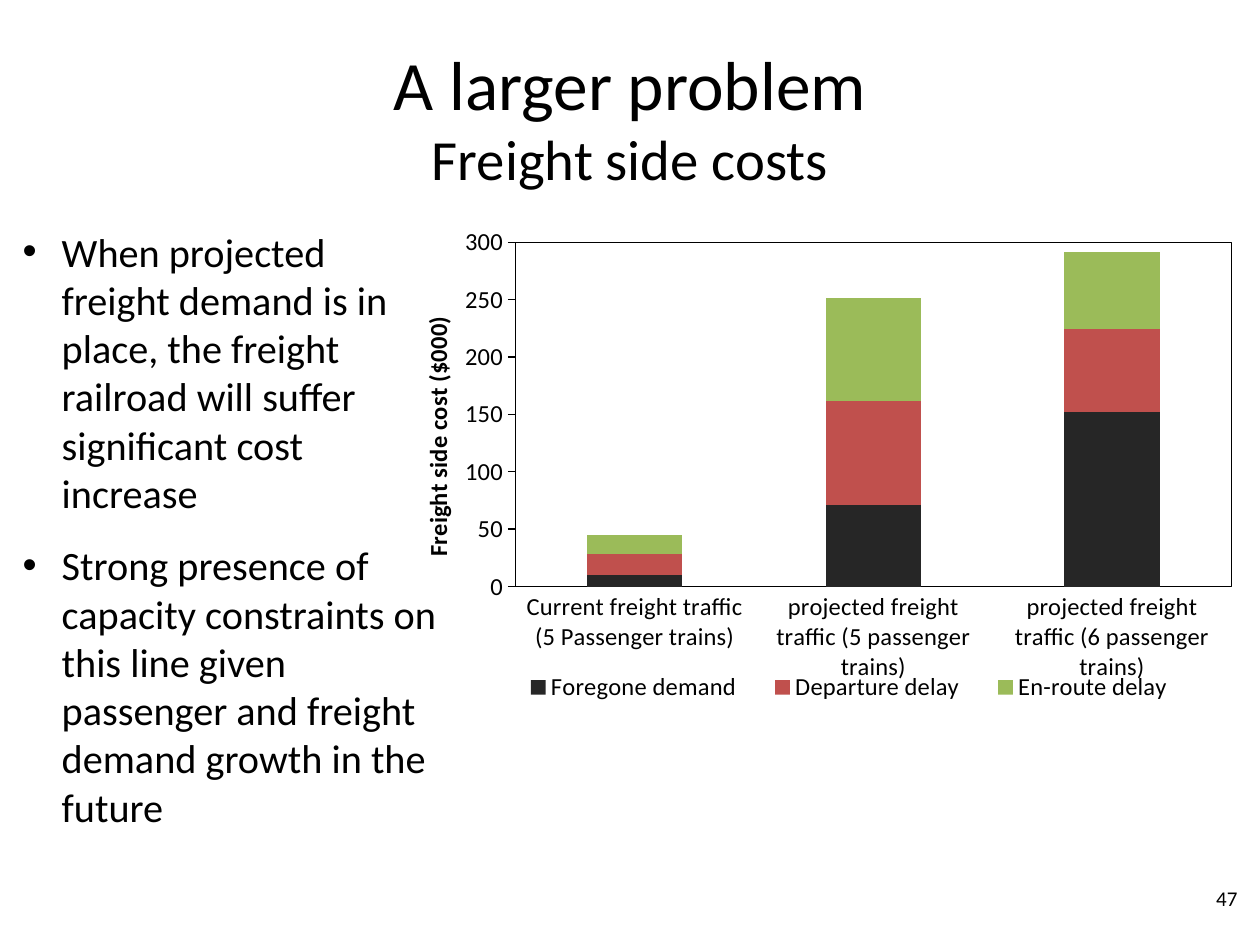
"""Build the slide on freight side costs with its stacked column chart."""
import lxml.etree
import pptx
import pptx.chart.data
import pptx.dml.color
import pptx.enum.chart
import pptx.enum.text
import pptx.oxml
import pptx.oxml.ns
import pptx.util

Inches = pptx.util.Inches
Pt = pptx.util.Pt
qn = pptx.oxml.ns.qn
FONT = "Calibri"
BLACK = pptx.dml.color.RGBColor(0x00, 0x00, 0x00)
CHARCOAL = pptx.dml.color.RGBColor(0x26, 0x26, 0x26)
RED = pptx.dml.color.RGBColor(0xC0, 0x50, 0x4D)
GREEN = pptx.dml.color.RGBColor(0x9B, 0xBB, 0x59)


def style_font(font, size, bold=False):
    font.name = FONT
    font.size = Pt(size)
    font.bold = bold
    font.color.rgb = BLACK


def set_layout(parent, position, inner=False, **fractions):
    for old in parent.findall(qn("c:layout")):
        parent.remove(old)
    layout = lxml.etree.Element(qn("c:layout"))
    manual = lxml.etree.SubElement(layout, qn("c:manualLayout"))
    settings = {"xMode": "edge", "yMode": "edge", **fractions}
    if inner:
        settings = {"layoutTarget": "inner", **settings}
    for tag, value in settings.items():
        lxml.etree.SubElement(manual, qn("c:" + tag)).set("val", str(value))
    parent.insert(position, layout)


deck = pptx.Presentation()
deck.slide_width = Inches(10)
deck.slide_height = Inches(7.5)
slide = deck.slides.add_slide(deck.slide_layouts[3])

title = slide.shapes.title
title.left, title.top, title.width, title.height = (
    Inches(0.5), Inches(0.3), Inches(9), Inches(1.25))
title.text_frame.auto_size = pptx.enum.text.MSO_AUTO_SIZE.NONE
heading = title.text_frame.paragraphs[0]
main_title = heading.add_run()
main_title.text = "A larger problem"
style_font(main_title.font, 39.6)
heading.add_line_break()
subtitle = heading.add_run()
subtitle.text = "Freight side costs"
style_font(subtitle.font, 32.4)

POINTS = [
    (1, 1.75, 3.17, "When projected freight demand is in place, the freight "
     "railroad will suffer significant cost increase"),
    (2, 4.24, 3.67, "Strong presence of capacity constraints on this line given "
     "passenger and freight demand growth in the future"),
]
for index, top, width, wording in POINTS:
    point = slide.placeholders[index]
    point.left, point.top, point.width, point.height = (
        Inches(0.08), Inches(top), Inches(width), Inches(2.42))
    point.text_frame.auto_size = pptx.enum.text.MSO_AUTO_SIZE.NONE
    point.text_frame.text = wording
    paragraph = point.text_frame.paragraphs[0]
    properties = paragraph._p.get_or_add_pPr()
    properties.set("marL", str(Inches(0.31)))
    properties.set("indent", str(-Inches(0.31)))
    lxml.etree.SubElement(properties, qn("a:buChar")).set("char", "•")
    paragraph.space_before = Pt(0)
    style_font(paragraph.font, 23)

costs = pptx.chart.data.CategoryChartData()
costs.categories = [
    "Current freight traffic (5 Passenger trains)",
    "projected freight traffic (5 passenger trains)",
    "projected freight traffic (6 passenger trains)",
]
COST_SERIES = [
    ("Foregone demand", (10, 71, 152), CHARCOAL),
    ("Departure delay", (18, 91, 72), RED),
    ("En-route delay", (17, 89, 67), GREEN),
]
for name, values, color in COST_SERIES:
    costs.add_series(name, values)
chart = slide.shapes.add_chart(
    pptx.enum.chart.XL_CHART_TYPE.COLUMN_STACKED,
    Inches(3.17), Inches(1.58), Inches(6.67), Inches(4.08), costs).chart
chart.has_title = False
style_font(chart.font, 14)

columns = chart.plots[0]
columns.gap_width = 150
columns.overlap = 100
columns.vary_by_categories = False
for series, (name, values, color) in zip(columns.series, COST_SERIES):
    series.format.fill.solid()
    series.format.fill.fore_color.rgb = color

TICK = pptx.enum.chart.XL_TICK_MARK
for axis, tick in ((chart.category_axis, TICK.NONE), (chart.value_axis, TICK.OUTSIDE)):
    axis.major_tick_mark = tick
    axis.minor_tick_mark = TICK.NONE
    axis.has_major_gridlines = False
    axis.format.line.color.rgb = BLACK
    axis.format.line.width = Pt(0.75)

cost_axis = chart.value_axis
cost_axis.minimum_scale = 0
cost_axis.maximum_scale = 300
cost_axis.major_unit = 50
cost_axis.has_title = True
cost_axis.axis_title.text_frame.text = "Freight side cost ($000)"
style_font(cost_axis.axis_title.text_frame.paragraphs[0].font, 14, bold=True)

chart.has_legend = True
chart.legend.position = pptx.enum.chart.XL_LEGEND_POSITION.BOTTOM
chart.legend.include_in_layout = False
style_font(chart.legend.font, 14)

plot_area = chart.element.find(".//" + qn("c:plotArea"))
set_layout(plot_area, 0, inner=True, x=0.138, y=0.084, w=0.852, h=0.67)
set_layout(plot_area.find(".//" + qn("c:title")), 1, x=0.02, y=0.22)
set_layout(chart.element.find(".//" + qn("c:legend")), 1, x=0.12, y=0.91, w=0.83, h=0.08)
plot_area.append(pptx.oxml.parse_xml(
    f'<c:spPr xmlns:c="{pptx.oxml.ns.nsuri("c")}" xmlns:a="{pptx.oxml.ns.nsuri("a")}">'
    f'<a:noFill/><a:ln w="{Pt(0.75)}"><a:solidFill><a:srgbClr val="{BLACK}"/>'
    '</a:solidFill></a:ln></c:spPr>'))

page_number = slide.shapes.add_textbox(
    Inches(8.75), Inches(6.93), Inches(1.17), Inches(0.4)).text_frame
page_number.word_wrap = True
page_number.vertical_anchor = pptx.enum.text.MSO_ANCHOR.MIDDLE
page_number.text = "47"
page_number.paragraphs[0].alignment = pptx.enum.text.PP_ALIGN.RIGHT
style_font(page_number.paragraphs[0].font, 12)

deck.save("out.pptx")
